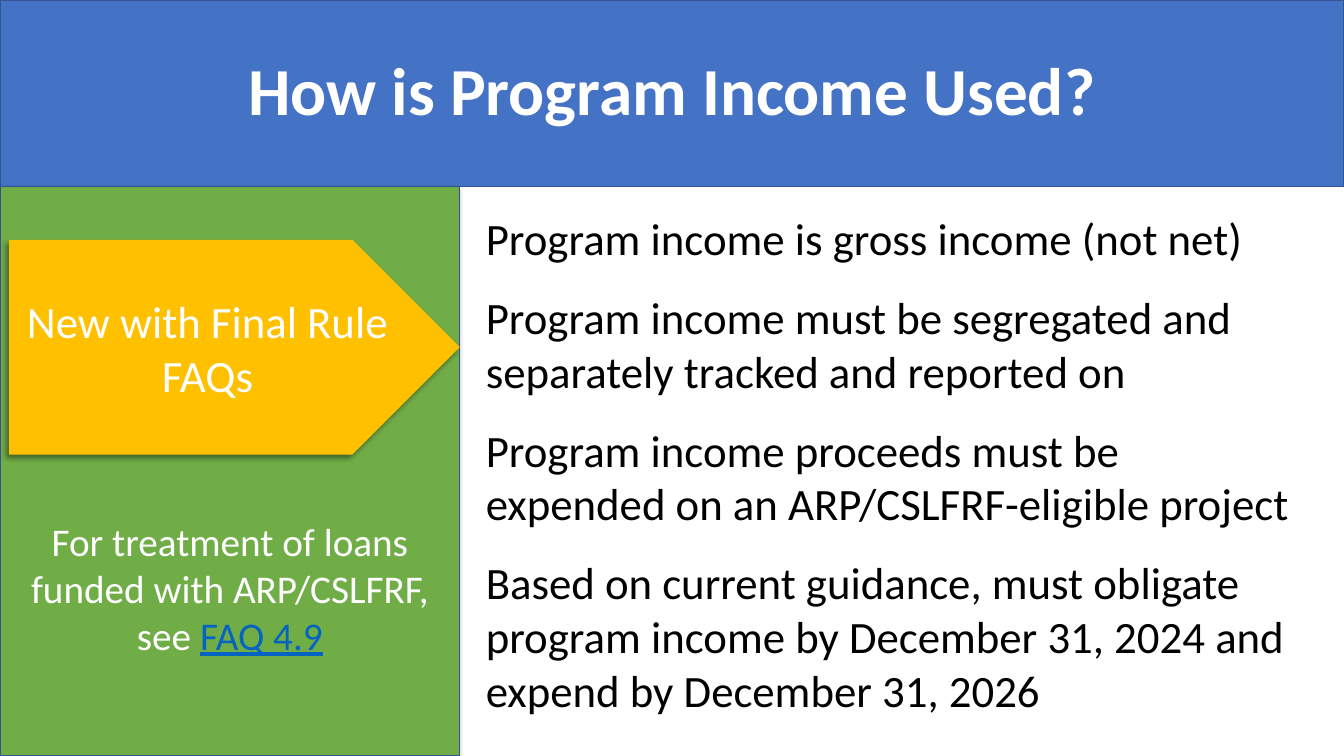
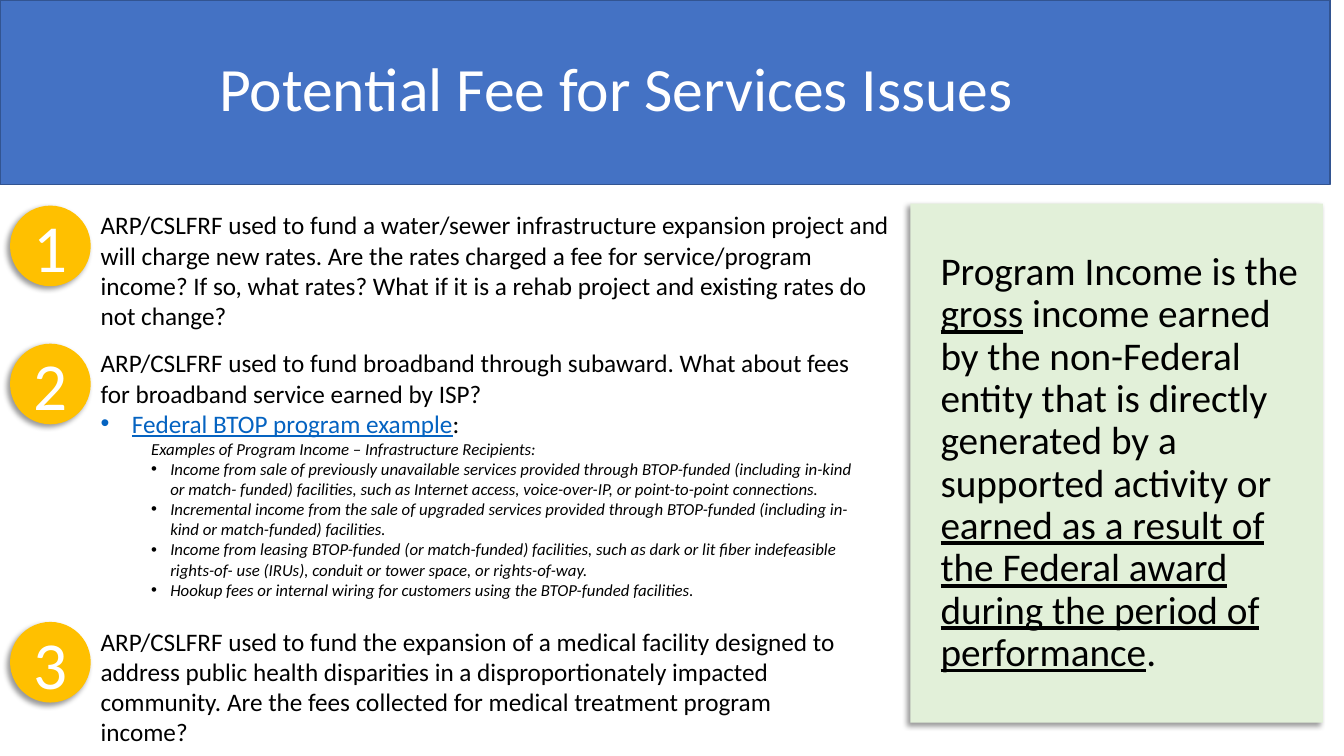
"""Build two slides about program income and fee for services issues."""
from dataclasses import dataclass, replace

from lxml.etree import SubElement
from pptx import Presentation
from pptx.dml.color import RGBColor
from pptx.enum.shapes import MSO_SHAPE
from pptx.enum.text import MSO_ANCHOR, MSO_AUTO_SIZE, PP_ALIGN
from pptx.oxml.ns import qn
from pptx.util import Inches, Pt

BLUE = RGBColor(0x44, 0x72, 0xC4)
EDGE = RGBColor(0x32, 0x54, 0x91)
GREEN = RGBColor(0x70, 0xAD, 0x47)
PALE_GREEN = RGBColor(0xE2, 0xF0, 0xD9)
GOLD = RGBColor(0xFF, 0xC0, 0x00)
LINK = RGBColor(0x05, 0x63, 0xC1)
WHITE = RGBColor(0xFF, 0xFF, 0xFF)
BLACK = RGBColor(0x00, 0x00, 0x00)
FONT = "Calibri"
SLIDE_WIDTH, SLIDE_HEIGHT = 13.33, 7.5
BAND_HEIGHT = 1.85
PANEL_WIDTH = 4.56


@dataclass(frozen=True)
class Style:
    """Paragraph and font settings."""
    size: int
    color: RGBColor = BLACK
    bold: bool = False
    italic: bool = False
    align: PP_ALIGN = PP_ALIGN.LEFT
    before: int = 0
    after: int = 0
    line_spacing: float = 1.0
    left: float = 0
    hanging: float = 0


HEADING = Style(48, WHITE, align=PP_ALIGN.CENTER)
CALLOUT = replace(HEADING, size=32)
PANEL_NOTE = replace(HEADING, size=28)
RULE = Style(32, before=12, after=6)
DEFINITION = Style(28, line_spacing=0.9, left=0.2)
ISSUE = Style(18)
ISSUE_BULLET = replace(ISSUE, left=0.31, hanging=0.31)
EXAMPLE = Style(12, italic=True, left=0.5)
EXAMPLE_BULLET = replace(EXAMPLE, left=0.69, hanging=0.19)

RULES = [
    "Program income is gross income (not net)",
    "Program income must be segregated and separately tracked and reported on",
    "Program income proceeds must be expended on an ARP/CSLFRF-eligible project",
    "Based on current guidance, must obligate program income by December 31, 2024 "
    "and expend by December 31, 2026",
]
EXAMPLES = [
    "Income from sale of previously unavailable services provided through BTOP-funded "
    "(including in-kind or match- funded) facilities, such as Internet access, "
    "voice-over-IP, or point-to-point connections.",
    "Incremental income from the sale of upgraded services provided through BTOP-funded "
    "(including in-kind or match-funded) facilities.",
    "Income from leasing BTOP-funded (or match-funded) facilities, such as dark or lit "
    "fiber indefeasible rights-of- use (IRUs), conduit or tower space, or rights-of-way.",
    "Hookup fees or internal wiring for customers using the BTOP-funded facilities.",
]
ISSUES = [
    (2.03, 8.12, 1.31, [
        (ISSUE, ["ARP/CSLFRF used to fund a water/sewer infrastructure expansion project "
                 "and will charge new rates. Are the rates charged a fee for "
                 "service/program income? If so, what rates? What if it is a rehab "
                 "project and existing rates do not change?"]),
    ]),
    (3.4, 7.71, 2.7, [
        (ISSUE, ["ARP/CSLFRF used to fund broadband through subaward. What about fees "
                 "for broadband service earned by ISP?"]),
        (ISSUE_BULLET, [("Federal BTOP program example", LINK), ":"]),
        (EXAMPLE, ["Examples of Program Income – Infrastructure Recipients:"]),
        *((EXAMPLE_BULLET, [example]) for example in EXAMPLES),
    ]),
    (6.16, 7.71, 1.31, [
        (ISSUE, ["ARP/CSLFRF used to fund the expansion of a medical facility designed to "
                 "address public health disparities in a disproportionately impacted "
                 "community. Are the fees collected for medical treatment program income?"]),
    ]),
]


def format_paragraph(paragraph, style):
    """Apply spacing, indents and an optional bullet."""
    properties = paragraph._p.get_or_add_pPr()
    properties.set("marL", str(Inches(style.left)))
    properties.set("indent", str(-Inches(style.hanging)))
    if style.hanging:
        SubElement(properties, qn("a:buFont"), typeface="Arial")
        SubElement(properties, qn("a:buChar"), char="•")
    paragraph.alignment = style.align
    paragraph.line_spacing = style.line_spacing
    paragraph.space_before = Pt(style.before)
    paragraph.space_after = Pt(style.after)


def write(frame, paragraphs):
    """Fill a frame; a (text, colour) pair is an underlined run."""
    frame.word_wrap = True
    for index, (style, pieces) in enumerate(paragraphs):
        paragraph = frame.add_paragraph() if index else frame.paragraphs[0]
        format_paragraph(paragraph, style if index else replace(style, before=0))
        for piece in pieces:
            underlined = isinstance(piece, tuple)
            text, color = piece if underlined else (piece, style.color)
            run = paragraph.add_run()
            run.text = text
            font = run.font
            font.name, font.size = FONT, Pt(style.size)
            font.bold, font.italic, font.underline = style.bold, style.italic, underlined
            font.color.rgb = color


def add_band_title(slide, text, style, width=SLIDE_WIDTH, height=BAND_HEIGHT):
    """Turn the title placeholder into the blue band."""
    title = slide.shapes.title
    title.left, title.top = Inches(0), Inches(0)
    title.width, title.height = Inches(width), Inches(height)
    title.fill.solid()
    title.fill.fore_color.rgb = BLUE
    title.line.color.rgb = EDGE
    title.line.width = Pt(1)
    frame = title.text_frame
    frame.auto_size = MSO_AUTO_SIZE.NONE
    frame.vertical_anchor = MSO_ANCHOR.MIDDLE
    write(frame, [(style, [text])])
    return frame


def add_card(slide, kind, box, fill, paragraphs, edge=None):
    """Add a filled shape with a soft shadow and middle-anchored text."""
    card = slide.shapes.add_shape(kind, *map(Inches, box))
    card.fill.solid()
    card.fill.fore_color.rgb = fill
    if edge is None:
        card.line.fill.background()
    else:
        card.line.color.rgb = edge
        card.line.width = Pt(1)
    card.shadow.inherit = False
    effects = card._element.spPr.find(qn("a:effectLst"))
    shadow = SubElement(effects, qn("a:outerShdw"), blurRad=str(Pt(4)), dist=str(Pt(3)),
                        dir="8100000", algn="tr", rotWithShape="0")
    color = SubElement(shadow, qn("a:srgbClr"), val="000000")
    SubElement(color, qn("a:alpha"), val="40000")
    card.text_frame.vertical_anchor = MSO_ANCHOR.MIDDLE
    write(card.text_frame, paragraphs)
    return card.text_frame


def add_text(slide, box, paragraphs):
    """Add a wrapping text box."""
    write(slide.shapes.add_textbox(*map(Inches, box)).text_frame, paragraphs)


def build_income_use(slide):
    """Build the slide on how program income is used."""
    add_band_title(slide, "How is Program Income Used?",
                   replace(HEADING, bold=True, line_spacing=0.9))
    panel = add_card(slide, MSO_SHAPE.RECTANGLE,
                     (0, BAND_HEIGHT, PANEL_WIDTH, SLIDE_HEIGHT - BAND_HEIGHT), GREEN,
                     [(PANEL_NOTE, ["For treatment of loans funded with ARP/CSLFRF, see ",
                                    ("FAQ 4.9", LINK)])], EDGE)
    panel.margin_top = Inches(2.36)
    add_text(slide, (4.72, 2.04, 8.37, 5.4), [(RULE, [rule]) for rule in RULES])
    add_card(slide, MSO_SHAPE.PENTAGON, (0.09, 2.38, PANEL_WIDTH - 0.09, 2.13), GOLD,
             [(CALLOUT, ["New with Final Rule FAQs"])])


def build_fee_issues(slide):
    """Build the slide on fee for services issues."""
    title = add_band_title(slide, "Potential Fee for Services Issues",
                           replace(HEADING, size=44), 13.19, 1.83)
    title.margin_right = Inches(1.06)
    title.margin_bottom = Inches(0.15)
    for number, (top, width, height, paragraphs) in enumerate(ISSUES, 1):
        add_text(slide, (0.9, top, width, height), paragraphs)
        add_card(slide, MSO_SHAPE.OVAL, (0.1, top + 0.01, 0.8, 0.8), GOLD,
                 [(HEADING, [str(number)])])
    add_card(slide, MSO_SHAPE.RECTANGLE, (9.03, 2.02, 4.09, 5.15), PALE_GREEN,
             [(DEFINITION, [
                 "Program Income is the ", ("gross", BLACK),
                 " income earned by the non-Federal entity that is directly generated by "
                 "a supported activity or ",
                 ("earned as a result of the Federal award during the period of "
                  "performance", BLACK), "."])])


def main():
    """Create and save the presentation."""
    presentation = Presentation()
    presentation.slide_width = Inches(SLIDE_WIDTH)
    presentation.slide_height = Inches(SLIDE_HEIGHT)
    title_only = presentation.slide_layouts[5]
    for build in (build_income_use, build_fee_issues):
        build(presentation.slides.add_slide(title_only))
    presentation.save("out.pptx")


if __name__ == "__main__":
    main()
